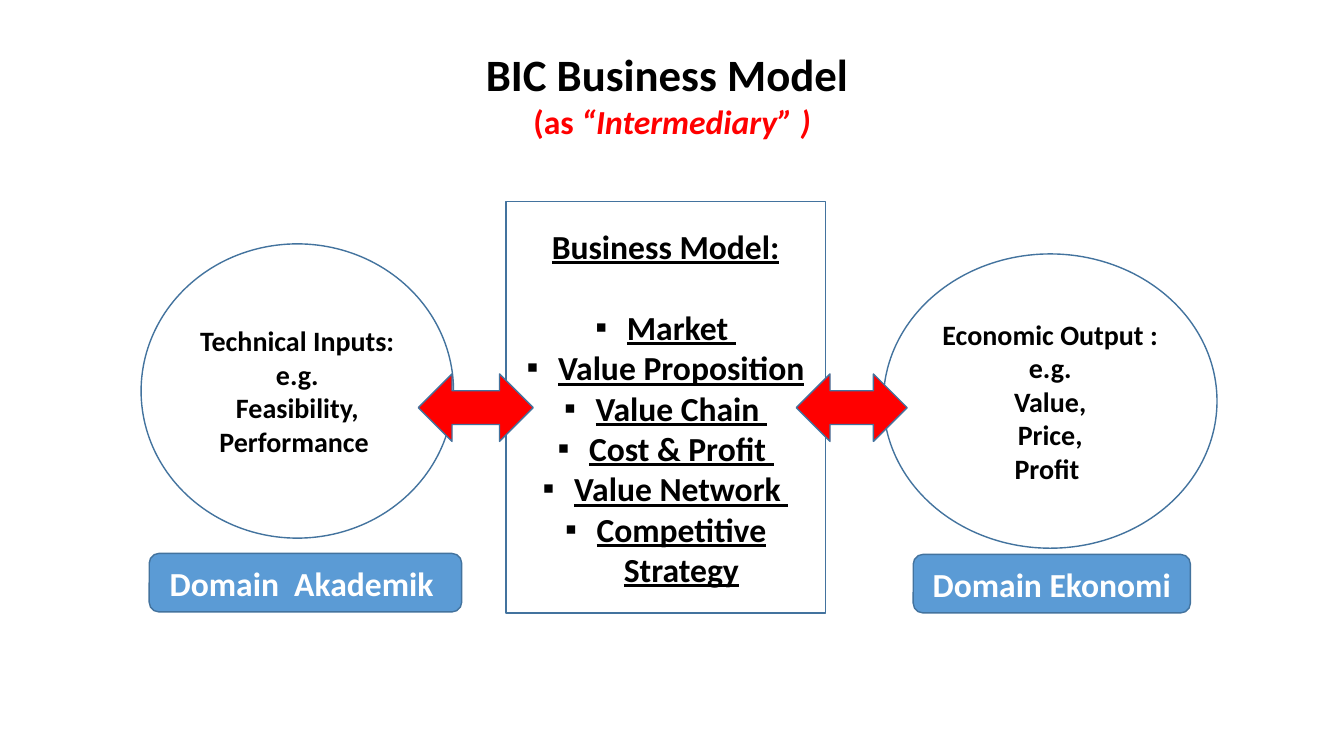
from lxml import etree
from pptx import Presentation
from pptx.dml.color import RGBColor
from pptx.enum import shapes, text
from pptx.oxml.ns import qn
from pptx.util import Pt

THEME = {
    "font": "Calibri",
    "black": "000000", "white": "FFFFFF", "red": "FF0000",
    "blue": "5B9BD5", "outline": "43739E",
    "title": 32, "large": 24, "body": 20,
}
SLIDE_SIZE = (960, 540)
KIND = shapes.MSO_SHAPE

# Boxes are left, top, width, height in points.
TITLE_BOX = (136, 30.2, 688.3, 74.9)
TITLE = "BIC Business Model "
SUBTITLE = [("(as ", False), ("“Intermediary” )", True)]

CIRCLES = [
    ((100.8, 174.2, 223.2, 210.2),
     ["Technical Inputs:", "e.g.", "Feasibility, Performance "]),
    ((631, 181.4, 238.3, 210.2),
     ["Economic Output :", "e.g.", "Value,", "Price,", "Profit "]),
]
MODEL_BOX = (361.4, 144, 228.2, 293.8)
MODEL_HEADING = "Business Model:"
MODEL_PARTS = ["Market ", "Value Proposition", "Value Chain ",
               "Cost & Profit ", "Value Network ", "Competitive Strategy"]
BULLET_INDENT = 22.5
HEADING_GAP = 29.3

ARROWS = [(298.8, 267.1, 82.1, 48.2), (568.8, 267.1, 79.2, 48.2)]
DOMAINS = [
    ((106.6, 395.3, 223.2, 41.8), "Domain  Akademik "),
    ((652.3, 396, 198, 41.8), "Domain Ekonomi"),
]


def color(name):
    return RGBColor.from_string(THEME[name])


def points(box):
    return [Pt(value) for value in box]


def add_paragraph(frame, first=False):
    paragraph = frame.paragraphs[0] if first else frame.add_paragraph()
    paragraph.alignment = text.PP_ALIGN.CENTER
    return paragraph


def write(paragraph, words, size="body", fill="black", italic=False, underline=False):
    """Append one bold run to the paragraph."""
    run = paragraph.add_run()
    run.text = words
    font = run.font
    font.name, font.size, font.bold = THEME["font"], Pt(THEME[size]), True
    font.color.rgb = color(fill)
    if italic:
        font.italic = True
    if underline:
        font.underline = True


def add_bullet(paragraph):
    properties = paragraph._p.get_or_add_pPr()
    properties.set("marL", str(Pt(BULLET_INDENT)))
    properties.set("indent", str(-Pt(BULLET_INDENT)))
    etree.SubElement(properties, qn("a:buFont")).set("typeface", "Arial")
    etree.SubElement(properties, qn("a:buChar")).set("char", "▪")


def add_shape(slide, kind, box, fill=None):
    shape = slide.shapes.add_shape(kind, *points(box))
    shape.shadow.inherit = False
    if fill:
        shape.fill.solid()
        shape.fill.fore_color.rgb = color(fill)
    else:
        shape.fill.background()
    shape.line.color.rgb = color("outline")
    shape.line.width = Pt(1)
    shape.text_frame.word_wrap = True
    shape.text_frame.vertical_anchor = text.MSO_ANCHOR.MIDDLE
    return shape


def add_title(slide):
    frame = slide.shapes.add_textbox(*points(TITLE_BOX)).text_frame
    frame.word_wrap = True
    frame.auto_size = text.MSO_AUTO_SIZE.SHAPE_TO_FIT_TEXT
    write(add_paragraph(frame, first=True), TITLE, size="title")
    subtitle = add_paragraph(frame)
    for words, italic in SUBTITLE:
        write(subtitle, words, size="large", fill="red", italic=italic)


def add_model(slide):
    frame = add_shape(slide, KIND.RECTANGLE, MODEL_BOX).text_frame
    heading = add_paragraph(frame, first=True)
    write(heading, MODEL_HEADING, size="large", underline=True)
    for index, part in enumerate(MODEL_PARTS):
        paragraph = add_paragraph(frame)
        add_bullet(paragraph)
        if index == 0:
            paragraph.space_before = Pt(HEADING_GAP)
        write(paragraph, part, size="large", underline=True)


def main():
    presentation = Presentation()
    presentation.slide_width, presentation.slide_height = points(SLIDE_SIZE)
    slide = presentation.slides.add_slide(presentation.slide_layouts[6])

    add_title(slide)
    for box, lines in CIRCLES:
        frame = add_shape(slide, KIND.OVAL, box).text_frame
        for index, line in enumerate(lines):
            write(add_paragraph(frame, first=index == 0), line)
    add_model(slide)
    for box in ARROWS:
        add_shape(slide, KIND.LEFT_RIGHT_ARROW, box, fill="red")
    for box, label in DOMAINS:
        frame = add_shape(slide, KIND.ROUNDED_RECTANGLE, box, fill="blue").text_frame
        write(add_paragraph(frame, first=True), label, size="large", fill="white")

    presentation.save("out.pptx")


if __name__ == "__main__":
    main()
